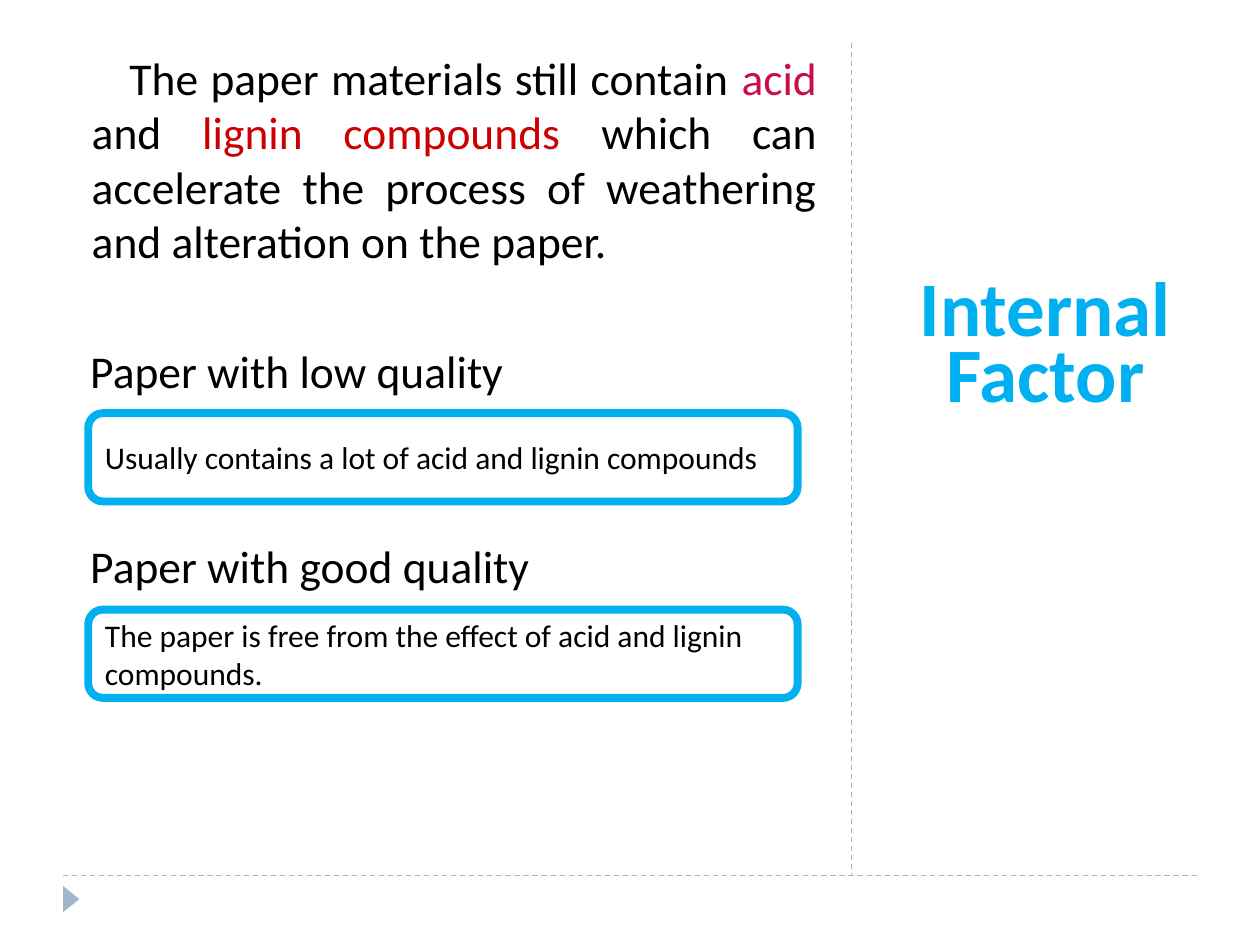
"""Build the slide on the internal factor of paper deterioration."""
from dataclasses import dataclass

import pptx
import pptx.dml.color
import pptx.enum.dml
import pptx.enum.shapes
import pptx.enum.text
import pptx.oxml.ns
import pptx.oxml.xmlchemy
import pptx.shapes.autoshape
import pptx.slide
import pptx.text.text
import pptx.util
from lxml import etree
from pptx.dml.color import RGBColor
from pptx.util import Cm

FONT = "Calibri"
BLACK = RGBColor(0x00, 0x00, 0x00)
WHITE = RGBColor(0xFF, 0xFF, 0xFF)
SKY = RGBColor(0x00, 0xB0, 0xF0)
CRIMSON = RGBColor(0xC9, 0x0D, 0x47)
RED = RGBColor(0xCC, 0x00, 0x00)
STEEL = RGBColor(0x9F, 0xB8, 0xCD)


@dataclass(frozen=True)
class Span:
    text: str
    color: RGBColor = BLACK


@dataclass(frozen=True)
class BodyParagraph:
    spans: tuple[Span, ...]
    first_indent: float
    space_before: float


@dataclass(frozen=True)
class Rule:
    start: tuple[float, float]
    end: tuple[float, float]


@dataclass(frozen=True)
class Callout:
    top: float
    text: str


RULES = (
    Rule((1.27, 17.65), (24.13, 17.65)),
    Rule((17.17, 0.86), (17.17, 17.63)),
)
BODY = (
    BodyParagraph(
        (
            Span("The paper materials still contain "),
            Span("acid", CRIMSON),
            Span(" and "),
            Span("lignin compounds ", RED),
            Span("which can accelerate the process of weathering and alteration on the paper."),
        ),
        0.76,
        0,
    ),
    BodyParagraph((Span("Paper with low quality"),), -0.03, 43),
    BodyParagraph((Span("Paper with good quality"),), -0.03, 80),
)
CALLOUTS = (
    Callout(8.33, "Usually contains a lot of acid and lignin compounds"),
    Callout(12.29, "The paper is free from the effect of acid and lignin compounds."),
)
TITLE_WORDS = ("Internal", "Factor")


def format_run(run: pptx.text.text._Run, size: float, color: RGBColor, bold: bool = False) -> None:
    run.font.name = FONT
    run.font.size = pptx.util.Pt(size)
    run.font.bold = bold
    run.font.color.rgb = color


def add_rule(slide: pptx.slide.Slide, rule: Rule) -> None:
    connector = slide.shapes.add_connector(
        pptx.enum.shapes.MSO_CONNECTOR.STRAIGHT, *map(Cm, rule.start + rule.end)
    )
    connector.line.color.rgb = STEEL
    connector.line.width = pptx.util.Pt(0.75)
    connector.line.dash_style = pptx.enum.dml.MSO_LINE.DASH
    properties = connector._element.spPr
    etree.SubElement(properties, pptx.oxml.ns.qn("a:effectLst"))


def add_marker(slide: pptx.slide.Slide) -> None:
    triangle = slide.shapes.add_shape(
        pptx.enum.shapes.MSO_SHAPE.ISOSCELES_TRIANGLE, Cm(1.17), Cm(17.96), Cm(0.53), Cm(0.33)
    )
    triangle.rotation = 90
    triangle.shadow.inherit = False
    triangle.fill.solid()
    triangle.fill.fore_color.rgb = STEEL
    triangle.line.fill.background()


def add_title(slide: pptx.slide.Slide) -> None:
    text_frame = slide.shapes.add_textbox(Cm(17.58), Cm(3.38), Cm(6.99), Cm(13.46)).text_frame
    text_frame.word_wrap = True
    text_frame.margin_top = Cm(2.93)
    text_frame.text = "\n".join(TITLE_WORDS)
    for index, paragraph in enumerate(text_frame.paragraphs):
        paragraph.alignment = pptx.enum.text.PP_ALIGN.CENTER
        paragraph.line_spacing = pptx.util.Pt(22)
        paragraph.space_before = pptx.util.Pt(6 if index else 0)
        paragraph.space_after = pptx.util.Pt(10)
        format_run(paragraph.runs[0], 44, SKY, bold=True)


def add_body(slide: pptx.slide.Slide) -> None:
    text_frame = slide.shapes.add_textbox(Cm(0.84), Cm(0.88), Cm(15.88), Cm(15.88)).text_frame
    text_frame.word_wrap = True
    for index, content in enumerate(BODY):
        paragraph = text_frame.add_paragraph() if index else text_frame.paragraphs[0]
        paragraph.alignment = pptx.enum.text.PP_ALIGN.JUSTIFY
        paragraph.space_before = pptx.util.Pt(content.space_before)
        properties = paragraph._p.get_or_add_pPr()
        properties.set("marL", str(Cm(0.76)))
        properties.set("indent", str(Cm(content.first_indent)))
        for span in content.spans:
            run = paragraph.add_run()
            run.text = span.text
            format_run(run, 26, span.color)


def add_callout(slide: pptx.slide.Slide, callout: Callout) -> None:
    shape = slide.shapes.add_shape(
        pptx.enum.shapes.MSO_SHAPE.ROUNDED_RECTANGLE, Cm(1.78), Cm(callout.top), Cm(14.3), Cm(1.78)
    )
    shape.shadow.inherit = False
    shape.fill.solid()
    shape.fill.fore_color.rgb = WHITE
    shape.line.color.rgb = SKY
    shape.line.width = pptx.util.Pt(4.5)
    shape.text_frame.word_wrap = True
    shape.text_frame.vertical_anchor = pptx.enum.text.MSO_ANCHOR.MIDDLE
    shape.text_frame.text = callout.text
    paragraph = shape.text_frame.paragraphs[0]
    paragraph.alignment = pptx.enum.text.PP_ALIGN.LEFT
    format_run(paragraph.runs[0], 18, BLACK)


def main() -> None:
    presentation = pptx.Presentation()
    presentation.slide_width = Cm(25.4)
    presentation.slide_height = Cm(19.05)
    slide = presentation.slides.add_slide(presentation.slide_layouts[6])
    for rule in RULES:
        add_rule(slide, rule)
    add_marker(slide)
    add_title(slide)
    add_body(slide)
    for callout in CALLOUTS:
        add_callout(slide, callout)
    presentation.save("out.pptx")


if __name__ == "__main__":
    main()
